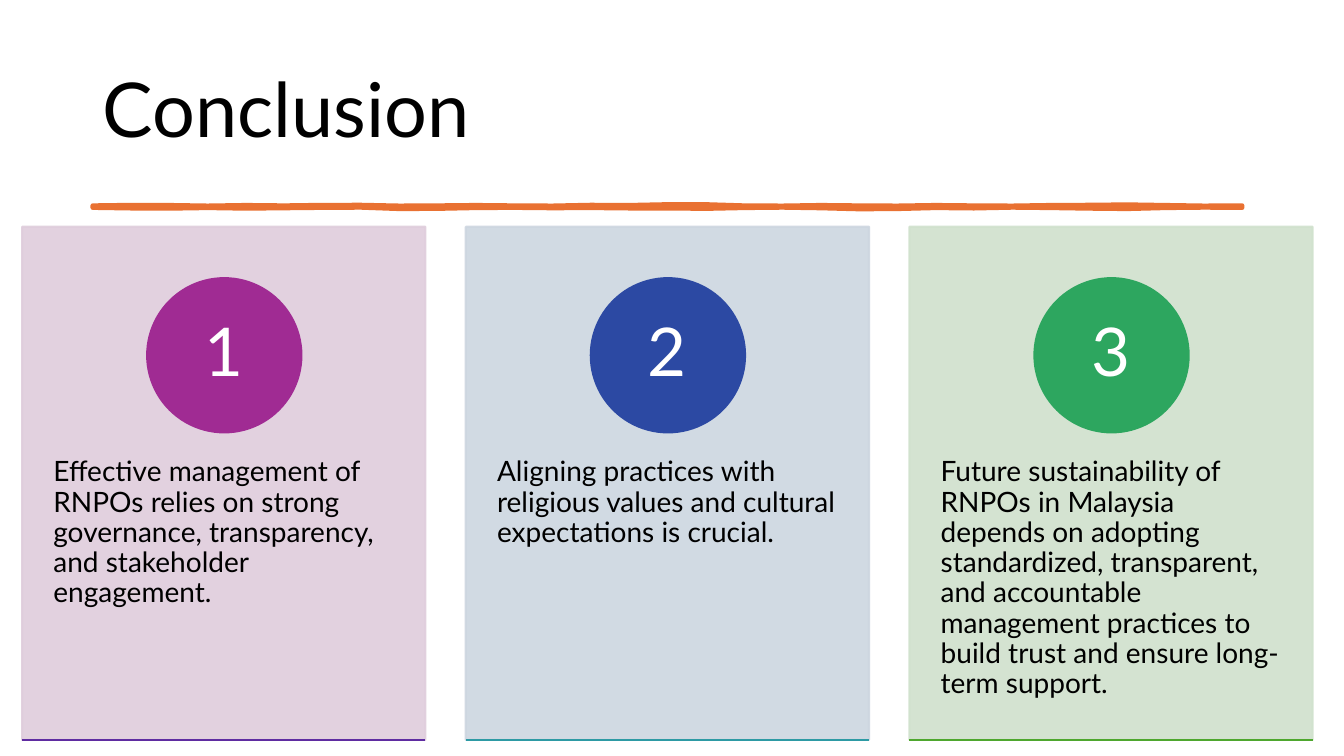
"""Build the conclusion slide: a title, a brushed rule and three numbered cards."""
from lxml.etree import SubElement
from pptx import Presentation
from pptx.dml.color import RGBColor
from pptx.enum.shapes import MSO_CONNECTOR, MSO_SHAPE
from pptx.enum.text import MSO_ANCHOR, PP_ALIGN
from pptx.oxml.ns import qn
from pptx.util import Pt

PX = 9144
FONT = "Lato"
CARD_LEFT, CARD_TOP, CARD_WIDTH, CARD_HEIGHT, CARD_STEP = 22, 225, 400, 509, 440
CIRCLE_SIZE, CIRCLE_TOP = 153, 276
NUMBER_SIZE = 108
CARDS = [
    ("DFCDDC", "A02B93", "5F2CA1",
     "Effective management of RNPOs relies on strong governance, transparency, "
     "and stakeholder engagement."),
    ("CDD6E0", "2C49A3", "2D9AA4",
     "Aligning practices with religious values and cultural expectations is crucial."),
    ("D0E1CD", "2DA65F", "4EA72E",
     "Future sustainability of RNPOs in Malaysia depends on adopting standardized, "
     "transparent, and accountable management practices to build trust and ensure "
     "long-term support."),
]


def paint(shape, color, line_width):
    shape.shadow.inherit = False
    shape.fill.solid()
    shape.fill.fore_color.rgb = RGBColor.from_string(color)
    shape.line.color.rgb = RGBColor.from_string(color)
    shape.line.width = Pt(line_width)


def add_text(text, box, size, color, insets, anchor=MSO_ANCHOR.TOP, align=PP_ALIGN.LEFT):
    shape = slide.shapes.add_textbox(*(value * PX for value in box))
    frame = shape.text_frame
    frame.word_wrap = True
    frame.vertical_anchor = anchor
    frame.margin_left = frame.margin_right = insets[0] * PX
    frame.margin_top = frame.margin_bottom = insets[1] * PX
    frame.text = text
    paragraph = frame.paragraphs[0]
    paragraph.alignment = align
    paragraph.line_spacing = 0.9
    font = paragraph.runs[0].font
    font.name = FONT
    font.size = Pt(size)
    font.color.rgb = RGBColor.from_string(color)


presentation = Presentation()
presentation.slide_width = 1333 * PX
presentation.slide_height = 750 * PX
slide = presentation.slides.add_slide(presentation.slide_layouts[6])

add_text("Conclusion", (92, 40, 1150, 145), 54, "000000", (10, 5), MSO_ANCHOR.MIDDLE)

RULE_LEFT, RULE_STEP = 920, 380
upper_edge = [2040, 2035, 2036, 2042, 2036, 2040, 2035, 2034, 2042, 2040, 2036,
              2040, 2042, 2034, 2036, 2028, 2028, 2040, 2042, 2036, 2040, 2042,
              2036, 2040, 2042, 2036, 2034, 2030, 2036, 2042, 2040]
lower_edge = [2060, 2066, 2068, 2062, 2068, 2064, 2060, 2058, 2072, 2070, 2062,
              2060, 2064, 2062, 2066, 2066, 2070, 2062, 2058, 2064, 2074, 2072,
              2062, 2066, 2058, 2062, 2068, 2072, 2062, 2058, 2060]
upper = [(RULE_LEFT + index * RULE_STEP, y) for index, y in enumerate(upper_edge)]
lower = [(RULE_LEFT + index * RULE_STEP, y) for index, y in enumerate(lower_edge)]
builder = slide.shapes.build_freeform(*upper[0], scale=PX / 10)
builder.add_line_segments(upper[1:] + lower[::-1], close=True)
rule = builder.convert_to_shape()
paint(rule, "E97132", 3.25)
SubElement(rule.line._get_or_add_ln(), qn("a:round"))

for index, (card_color, circle_color, base_color, text) in enumerate(CARDS):
    left = CARD_LEFT + index * CARD_STEP
    center = left + CARD_WIDTH // 2
    bottom = CARD_TOP + CARD_HEIGHT

    card = slide.shapes.add_shape(MSO_SHAPE.RECTANGLE, left * PX, CARD_TOP * PX,
                                  CARD_WIDTH * PX, CARD_HEIGHT * PX)
    paint(card, card_color, 1.5)
    for color_element in card._element.spPr.iter(qn("a:srgbClr")):
        SubElement(color_element, qn("a:alpha"), val="90000")

    add_text(text, (left, 418, CARD_WIDTH, 305), 20, "000000", (31, 36))

    circle = slide.shapes.add_shape(MSO_SHAPE.OVAL, (center - CIRCLE_SIZE // 2) * PX,
                                    CIRCLE_TOP * PX, CIRCLE_SIZE * PX, CIRCLE_SIZE * PX)
    paint(circle, circle_color, 1.5)
    add_text(str(index + 1), (center - NUMBER_SIZE // 2, 298, NUMBER_SIZE, NUMBER_SIZE),
             48, "FFFFFF", (12, 1), MSO_ANCHOR.MIDDLE, PP_ALIGN.CENTER)

    base = slide.shapes.add_connector(MSO_CONNECTOR.STRAIGHT, left * PX, bottom * PX,
                                      (left + CARD_WIDTH) * PX, bottom * PX)
    base.line.color.rgb = RGBColor.from_string(base_color)
    base.line.width = Pt(1.5)
    SubElement(base._element.spPr, qn("a:effectLst"))

presentation.save("out.pptx")
